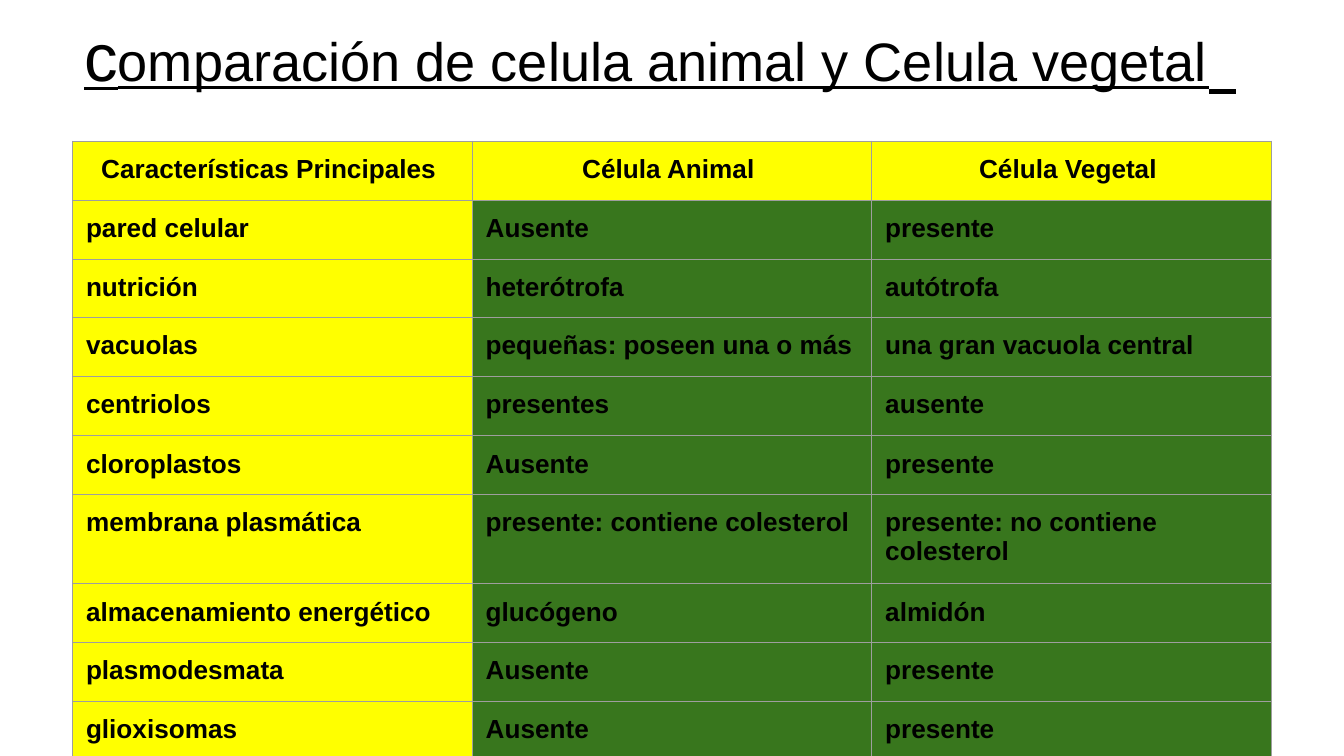
from dataclasses import dataclass

from lxml.etree import SubElement
from pptx import Presentation
from pptx.dml.color import RGBColor
from pptx.enum.text import MSO_ANCHOR, PP_ALIGN
from pptx.oxml.ns import qn
from pptx.util import Inches, Pt

COLORS = {"text": "000000", "border": "9E9E9E", "label": "FFFF00", "value": "38761D"}
FONT = "Arial"
INSET = Inches(0.1)
SLIDE_WIDTH = Inches(10)
SLIDE_HEIGHT = SLIDE_WIDTH * 9 // 16
COLUMN_WIDTH = Inches(8.92) // 3
FRAME_SIDE = Inches(3.28)


@dataclass
class Feature:
    name: str
    animal: str
    plant: str
    height: float = 0.44


@dataclass
class TitlePart:
    text: str
    size: int


TITLE = [
    TitlePart("c", 36),
    TitlePart("omparación de celula animal y Celula vegetal", 29),
    TitlePart(" ", 52),
]
FEATURES = [
    Feature("Características Principales ", "Célula Animal ", "Célula Vegetal "),
    Feature("pared celular", "Ausente", "presente"),
    Feature("nutrición", "heterótrofa", "autótrofa", 0.43),
    Feature("vacuolas", "pequeñas: poseen una o más", "una gran vacuola central"),
    Feature("centriolos", "presentes", "ausente"),
    Feature("cloroplastos", "Ausente", "presente", 0.43),
    Feature("membrana plasmática", "presente: contiene colesterol",
            "presente: no contiene colesterol", 0.4),
    Feature("almacenamiento energético", "glucógeno", "almidón", 0.4),
    Feature("plasmodesmata", "Ausente", "presente"),
    Feature("glioxisomas", "Ausente", "presente", 0.4),
]


def color(key: str) -> RGBColor:
    return RGBColor.from_string(COLORS[key])


def style_run(run, size: float) -> None:
    run.font.name = FONT
    run.font.size = Pt(size)
    run.font.color.rgb = color("text")


def set_insets(frame) -> None:
    """Give a text frame or table cell the same margin on every side."""
    frame.margin_left = frame.margin_right = INSET
    frame.margin_top = frame.margin_bottom = INSET


def add_borders(cell) -> None:
    """Line all four sides; the lines must precede the fill in the XML."""
    properties = cell._tc.get_or_add_tcPr()
    for side in ("a:lnL", "a:lnR", "a:lnT", "a:lnB"):
        line = SubElement(properties, qn(side), w=str(Pt(0.75)))
        fill = SubElement(line, qn("a:solidFill"))
        SubElement(fill, qn("a:srgbClr"), val=COLORS["border"])


def add_title(slide, parts: list[TitlePart]) -> None:
    title = slide.shapes.add_textbox(Inches(0.27), Inches(0.27), Inches(9.28), Inches(0.58))
    frame = title.text_frame
    frame.word_wrap = True
    frame.vertical_anchor = MSO_ANCHOR.BOTTOM
    set_insets(frame)
    heading = frame.paragraphs[0]
    heading.alignment = PP_ALIGN.CENTER
    for part in parts:
        run = heading.add_run()
        run.text = part.text
        style_run(run, part.size)
        run.font.underline = True


def fill_cell(cell, text: str, is_header: bool, is_label: bool) -> None:
    set_insets(cell)
    add_borders(cell)
    cell.fill.solid()
    cell.fill.fore_color.rgb = color("label" if is_header or is_label else "value")
    paragraph = cell.text_frame.paragraphs[0]
    paragraph.text = text
    paragraph.alignment = PP_ALIGN.CENTER if is_header else PP_ALIGN.LEFT
    run = paragraph.runs[0]
    style_run(run, 14)
    run.font.bold = True


def add_comparison(slide, features: list[Feature]) -> None:
    """Add the table; its frame stays small so that rows keep their own heights."""
    frame = slide.shapes.add_table(
        len(features), 3, Inches(0.54), Inches(1.05), FRAME_SIDE, FRAME_SIDE)
    table = frame.table
    for column in table.columns:
        column.width = COLUMN_WIDTH
    for row, feature in enumerate(features):
        table.rows[row].height = Inches(feature.height)
        for col, text in enumerate((feature.name, feature.animal, feature.plant)):
            fill_cell(table.cell(row, col), text, row == 0, col == 0)
    frame.width = frame.height = FRAME_SIDE


def main() -> None:
    deck = Presentation()
    deck.slide_width, deck.slide_height = SLIDE_WIDTH, SLIDE_HEIGHT
    slide = deck.slides.add_slide(deck.slide_layouts[6])
    add_title(slide, TITLE)
    add_comparison(slide, FEATURES)
    deck.save("out.pptx")


if __name__ == "__main__":
    main()
